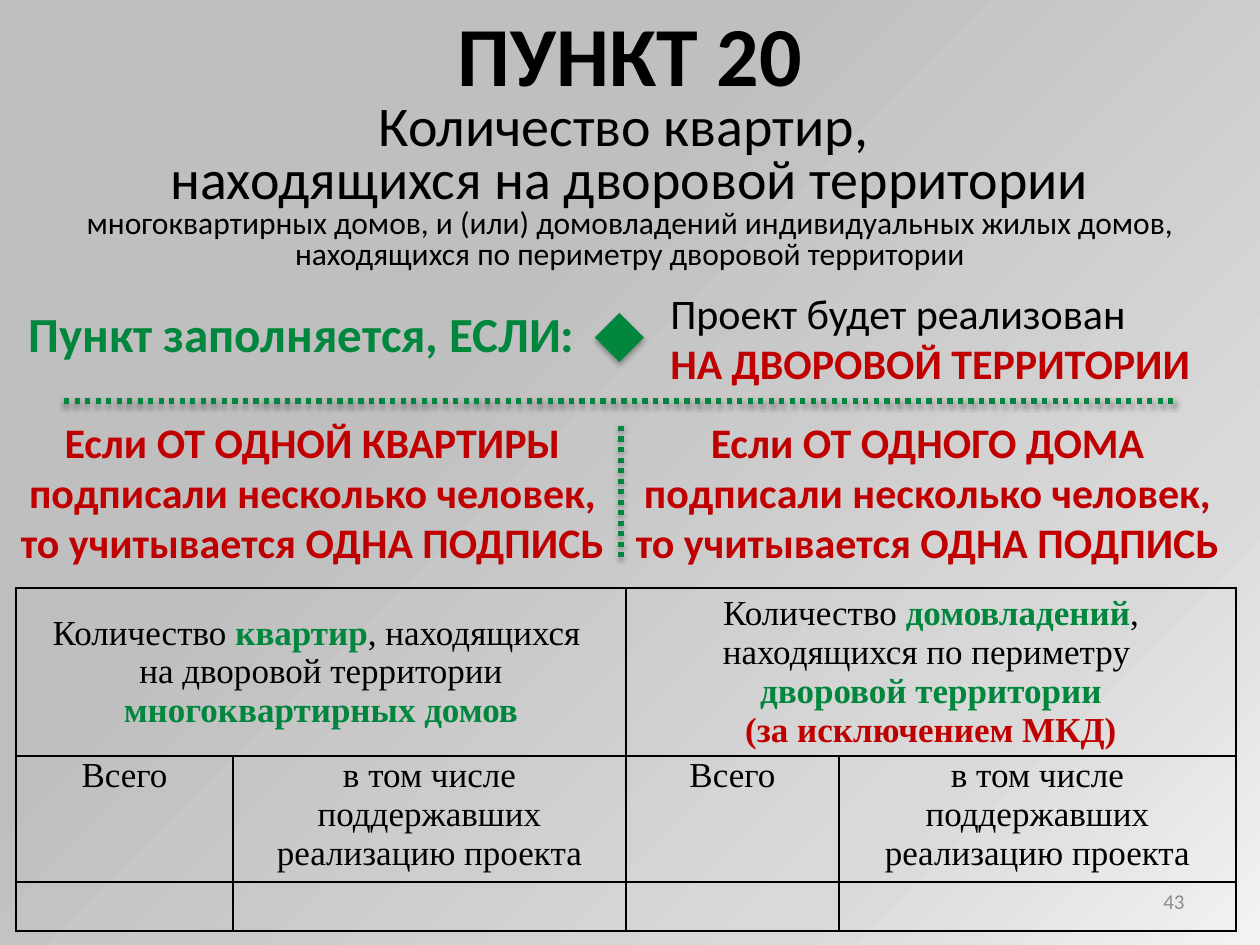
from lxml import etree
from pptx import Presentation
from pptx.dml.color import RGBColor
from pptx.enum.dml import MSO_LINE
from pptx.enum.shapes import MSO_CONNECTOR, MSO_SHAPE
from pptx.enum.text import MSO_ANCHOR, MSO_AUTO_SIZE, PP_ALIGN
from pptx.oxml import parse_xml
from pptx.oxml.ns import nsdecls, qn
from pptx.util import Pt

LEFT, CENTER, RIGHT = PP_ALIGN.LEFT, PP_ALIGN.CENTER, PP_ALIGN.RIGHT
TOP, MIDDLE = MSO_ANCHOR.TOP, MSO_ANCHOR.MIDDLE
DOTS = MSO_LINE.ROUND_DOT
DIAMOND = MSO_SHAPE.DIAMOND
STRAIGHT = MSO_CONNECTOR.STRAIGHT
FIXED = MSO_AUTO_SIZE.NONE

EMU_PER_PX = 914400 / 126
BLACK, GREEN, RED, GREY = "000000", "00863D", "C00000", "8C8C8C"
SANS, SERIF = "Calibri", "Times New Roman"


def px(length):
    return round(length * EMU_PER_PX)


def rgb(value):
    return RGBColor.from_string(value)


def write(frame, *spans, size, font=SANS, color=BLACK, bold=False, align=LEFT, spacing=None):
    """Add one paragraph; a span is a text or a (text, changed format) pair."""
    para = frame.paragraphs[0]
    if para.runs:
        para = frame.add_paragraph()
    para.alignment = align
    if spacing:
        para.line_spacing = spacing
    for item in spans:
        text, changes = (item, {}) if isinstance(item, str) else item
        look = {"size": size, "color": color, "bold": bold, **changes}
        if text == "\n":
            para.add_line_break()
            continue
        span = para.add_run()
        span.text = text
        span.font.name = font
        span.font.size = Pt(look["size"])
        span.font.bold = look["bold"]
        span.font.color.rgb = rgb(look["color"])


def text_frame(page, left, top, width, height, wrap=True, anchor=TOP):
    box = page.shapes.add_textbox(px(left), px(top), px(width), px(height))
    frame = box.text_frame
    frame.word_wrap = wrap
    frame.vertical_anchor = anchor
    return frame


def add_shadow(shape):
    shape._element.spPr.append(parse_xml(
        f'<a:effectLst {nsdecls("a")}>'
        '<a:outerShdw blurRad="40000" dist="23000" dir="5400000" rotWithShape="0">'
        '<a:srgbClr val="000000"><a:alpha val="35000"/></a:srgbClr>'
        '</a:outerShdw></a:effectLst>'))


def add_dotted_line(page, x1, y1, x2, y2):
    line = page.shapes.add_connector(STRAIGHT, px(x1), px(y1), px(x2), px(y2))
    line.line.color.rgb = rgb(GREEN)
    line.line.width = Pt(3)
    line.line.dash_style = DOTS
    add_shadow(line)


def set_background(page):
    stops = "".join(
        f'<a:gs pos="{place * 1000}"><a:srgbClr val="{color}"/></a:gs>'
        for place, color in [(0, "F2F2F2"), (22, "D9D9D9"), (65, "BFBFBF")])
    page._element.cSld.insert(0, parse_xml(
        f'<p:bg {nsdecls("p", "a")}><p:bgPr><a:gradFill rotWithShape="1">'
        f'<a:gsLst>{stops}</a:gsLst>'
        '<a:path path="circle"><a:fillToRect l="100000" t="100000"/></a:path>'
        '<a:tileRect r="-100000" b="-100000"/>'
        '</a:gradFill><a:effectLst/></p:bgPr></p:bg>'))


def fill_title(page, left, top, width, height):
    title = page.shapes.title
    title.left, title.top, title.width, title.height = map(px, (left, top, width, height))
    frame = title.text_frame
    frame.auto_size = FIXED
    frame.word_wrap = True
    frame.vertical_anchor = TOP
    write(frame, "ПУНКТ 20", size=48, bold=True, align=CENTER)
    write(frame, "Количество квартир, ", size=32, align=CENTER, spacing=0.8)
    write(frame, "находящихся на дворовой территории", "\n",
          ("многоквартирных домов, и (или) домовладений индивидуальных жилых домов, "
           "находящихся по периметру дворовой территории", {"size": 18}),
          size=32, align=CENTER, spacing=0.8)


def add_condition(page, left, top):
    label = text_frame(page, left, top + 16, 577, 72, wrap=False)
    write(label, "Пункт заполняется, ЕСЛИ:", size=28, color=GREEN, bold=True)

    marker = page.shapes.add_shape(DIAMOND, px(left + 579), px(top + 32), px(49), px(49))
    marker.fill.solid()
    marker.fill.fore_color.rgb = rgb(GREEN)
    marker.line.fill.background()
    add_shadow(marker)

    answer = text_frame(page, left + 642, top, 577, 115)
    write(answer, "Проект будет реализован", size=24)
    write(answer, "НА ДВОРОВОЙ ТЕРРИТОРИИ", size=24, color=RED, bold=True)

    add_dotted_line(page, left + 48, top + 120, left + 1160, top + 120)


def add_signature_rules(page, left, top, width, height):
    for column, source in enumerate(["ОТ ОДНОЙ КВАРТИРЫ", "ОТ ОДНОГО ДОМА"]):
        frame = text_frame(page, left + column * width, top, width, height)
        write(frame, f"Если {source} подписали несколько человек, "
              "то учитывается ОДНА ПОДПИСЬ",
              size=24, color=RED, bold=True, align=CENTER)
    middle = left + width + 1
    add_dotted_line(page, middle, top + 16, middle, top + height - 13)


def format_cell(cell, anchor):
    cell.fill.background()
    cell.vertical_anchor = anchor
    cell.margin_left = cell.margin_right = px(9)
    cell.margin_top = cell.margin_bottom = 0
    props = cell._tc.get_or_add_tcPr()
    for place, side in enumerate(["lnL", "lnR", "lnT", "lnB"]):
        border = etree.Element(qn(f"a:{side}"), w=str(Pt(1)))
        fill = etree.SubElement(border, qn("a:solidFill"))
        etree.SubElement(fill, qn("a:srgbClr"), val=BLACK)
        props.insert(place, border)


def add_count_table(page, left, top):
    widths, heights = [217, 393, 213, 397], [168, 126, 49]
    table = page.shapes.add_table(
        len(heights), len(widths), px(left), px(top), px(sum(widths)), px(sum(heights))).table
    table.first_row = table.horz_banding = False
    for column, width in zip(table.columns, widths):
        column.width = px(width)
    for number, (row, height) in enumerate(zip(table.rows, heights)):
        row.height = px(height)
        for cell in row.cells:
            format_cell(cell, TOP if number else MIDDLE)

    look = {"size": 20, "font": SERIF, "align": CENTER}
    green, red = {"color": GREEN, "bold": True}, {"color": RED, "bold": True}
    headings = [
        [["Количество ", ("квартир", green), ", находящихся "],
         ["на дворовой территории ", ("многоквартирных домов", green)]],
        [["Количество ", ("домовладений", green), ", находящихся по периметру "],
         [("дворовой территории", green)],
         [("(за исключением МКД)", red)]],
    ]
    for first, heading in zip([0, 2], headings):
        cell = table.cell(0, first)
        cell.merge(table.cell(0, first + 1))
        for spans in heading:
            write(cell.text_frame, *spans, **look)
        write(table.cell(1, first).text_frame, "Всего", **look)
        write(table.cell(1, first + 1).text_frame,
              "в том числе поддержавших реализацию проекта", **look)


def add_page_number(page, left, top, width, height):
    frame = text_frame(page, left, top, width, height, anchor=MIDDLE)
    write(frame, "43", size=12, color=GREY, align=RIGHT)


def main():
    deck = Presentation()
    deck.slide_width, deck.slide_height = px(1260), px(945)
    page = deck.slides.add_slide(deck.slide_layouts[5])
    set_background(page)
    fill_title(page, 0, -4, 1260, 285)
    add_condition(page, 16, 281)
    add_count_table(page, 16, 588)
    add_signature_rules(page, 5, 410, 615, 165)
    add_page_number(page, 903, 876, 294, 50)
    deck.save("out.pptx")


if __name__ == "__main__":
    main()
